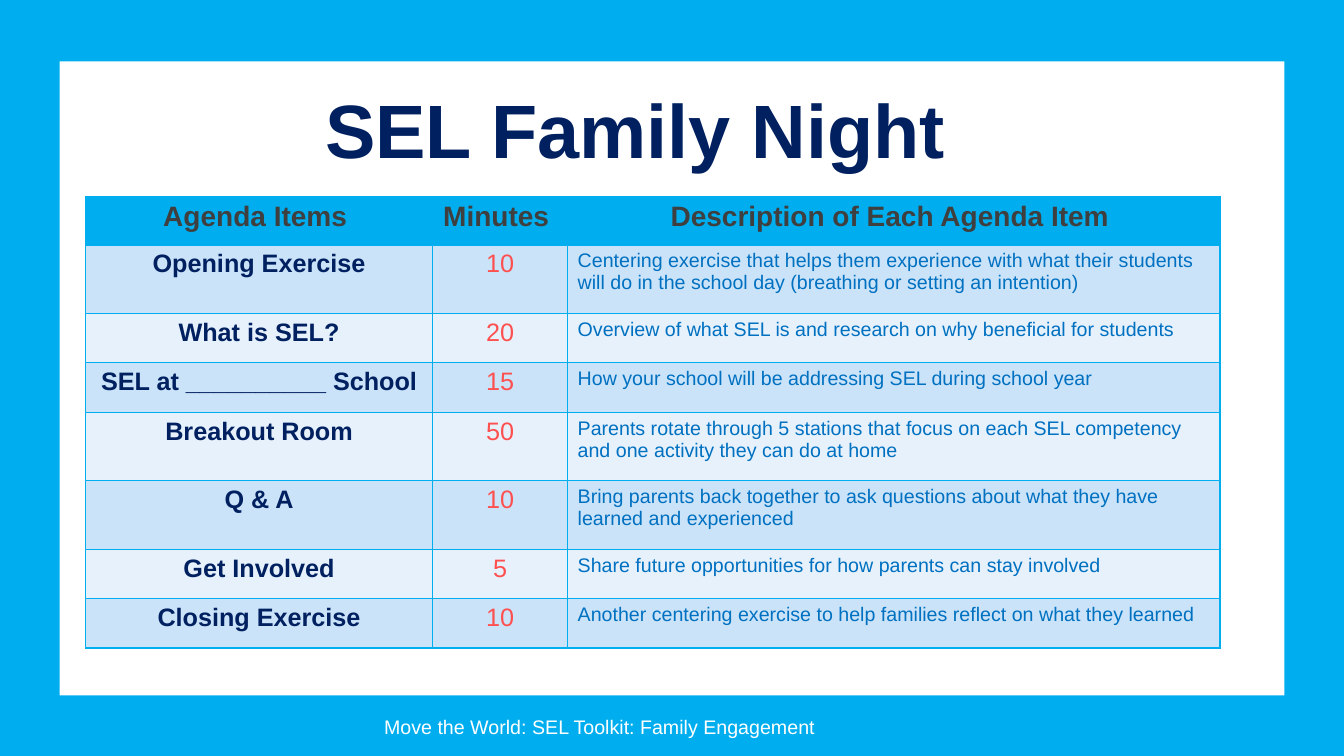
from lxml import etree
from pptx import Presentation
from pptx import util as u
from pptx.dml.color import RGBColor
from pptx.enum import shapes, text
from pptx.oxml import ns

SKY = RGBColor(0x00, 0xAE, 0xEF)
WHITE = RGBColor(0xFF, 0xFF, 0xFF)
NAVY = RGBColor(0x00, 0x20, 0x60)
GREY = RGBColor(0x3F, 0x3F, 0x3F)
CORAL = RGBColor(0xFF, 0x50, 0x50)
BLUE = RGBColor(0x00, 0x70, 0xC0)
BANDS = RGBColor(0xCA, 0xE3, 0xF9), RGBColor(0xE6, 0xF1, 0xFC)

LEFT, MID = text.PP_ALIGN.LEFT, text.PP_ALIGN.CENTER
HEAD = [(20, GREY, True, MID)] * 3
BODY = [(18, NAVY, True, MID), (18, CORAL, False, MID), (14, BLUE, False, LEFT)]
COLS = 3.44, 1.34, 6.47
HIGH = 0.48, 0.68, 0.49, 0.49, 0.68, 0.68, 0.49, 0.49
AGENDA = [
    ("Agenda Items ", "Minutes ", "Description of Each Agenda Item "),
    ("Opening Exercise", "10",
     "Centering exercise that helps them experience with what their students "
     "will do in the school day (breathing or setting an intention)"),
    ("What is SEL?", "20",
     "Overview of what SEL is and research on why beneficial for students"),
    ("SEL at __________ School", "15",
     "How your school will be addressing SEL during school year"),
    ("Breakout Room", "50",
     "Parents rotate through 5 stations that focus on each SEL competency "
     "and one activity they can do at home"),
    ("Q & A", "10",
     "Bring parents back together to ask questions about what they have "
     "learned and experienced"),
    ("Get Involved", "5",
     "Share future opportunities for how parents can stay involved"),
    ("Closing Exercise", "10",
     "Another centering exercise to help families reflect on what they learned"),
]


def box(*sizes):
    """Turn inches into lengths."""
    return [u.Inches(size) for size in sizes]


def write(frame, words, size, color, bold=False, align=MID):
    """Write one styled run into a text frame."""
    para = frame.paragraphs[0]
    para.alignment = align
    run = para.add_run()
    run.text = words
    font = run.font
    font.name, font.size, font.bold = "Arial", u.Pt(size), bold
    font.color.rgb = color


def edge(cell):
    """Draw a one-point line on each side of a cell."""
    props = cell._tc.get_or_add_tcPr()
    for side in "LRTB":
        line = etree.SubElement(props, ns.qn(f"a:ln{side}"), w=str(u.Pt(1)))
        fill = etree.SubElement(line, ns.qn("a:solidFill"))
        etree.SubElement(fill, ns.qn("a:srgbClr"), val=str(SKY))


def header(slide, left, top, width, height):
    """Place the title in its box."""
    title = slide.shapes.title
    title.left, title.top, title.width, title.height = box(left, top, width, height)
    frame = title.text_frame
    frame.word_wrap = True
    frame.auto_size = text.MSO_AUTO_SIZE.NONE
    frame.vertical_anchor = text.MSO_ANCHOR.BOTTOM
    frame.margin_left = frame.margin_right = u.Inches(0.1)
    frame.margin_top = frame.margin_bottom = u.Inches(0.1)
    write(frame, "SEL Family Night ", 54, NAVY, True)


def panel(slide, left, top, width, height):
    """Place the white panel behind the title."""
    card = slide.shapes.add_shape(
        shapes.MSO_SHAPE.RECTANGLE, *box(left, top, width, height))
    card.shadow.inherit = False
    card.fill.solid()
    card.fill.fore_color.rgb = WHITE
    card.line.fill.background()
    slide.shapes.title._element.addprevious(card._element)


def agenda(slide, left, top):
    """Place the agenda table with its banded rows."""
    grid = slide.shapes.add_table(
        len(AGENDA), len(COLS), *box(left, top, sum(COLS), sum(HIGH))).table
    for col, width in zip(grid.columns, COLS):
        col.width = u.Inches(width)
    for i, (row, high, items) in enumerate(zip(grid.rows, HIGH, AGENDA)):
        row.height = u.Inches(high)
        for cell, words, style in zip(row.cells, items, BODY if i else HEAD):
            edge(cell)
            cell.fill.solid()
            cell.fill.fore_color.rgb = BANDS[(i - 1) % 2] if i else SKY
            write(cell.text_frame, words, *style)


def footer(slide, left, top, width, height):
    """Place the closing line under the panel."""
    frame = slide.shapes.add_textbox(*box(left, top, width, height)).text_frame
    frame.word_wrap = True
    write(frame, "Move the World: SEL Toolkit: Family Engagement ", 14, WHITE)


def main():
    """Build and save the slide."""
    deck = Presentation()
    deck.slide_width, deck.slide_height = box(13.33, 7.5)
    slide = deck.slides.add_slide(deck.slide_layouts.get_by_name("Title Only"))
    slide.background.fill.solid()
    slide.background.fill.fore_color.rgb = SKY
    header(slide, 0.85, 1.25, 11.11, 0.57)
    panel(slide, 0.59, 0.61, 12.15, 6.29)
    agenda(slide, 0.85, 1.95)
    footer(slide, 2.88, 7.04, 6.19, 0.34)
    deck.save("out.pptx")


if __name__ == "__main__":
    main()
